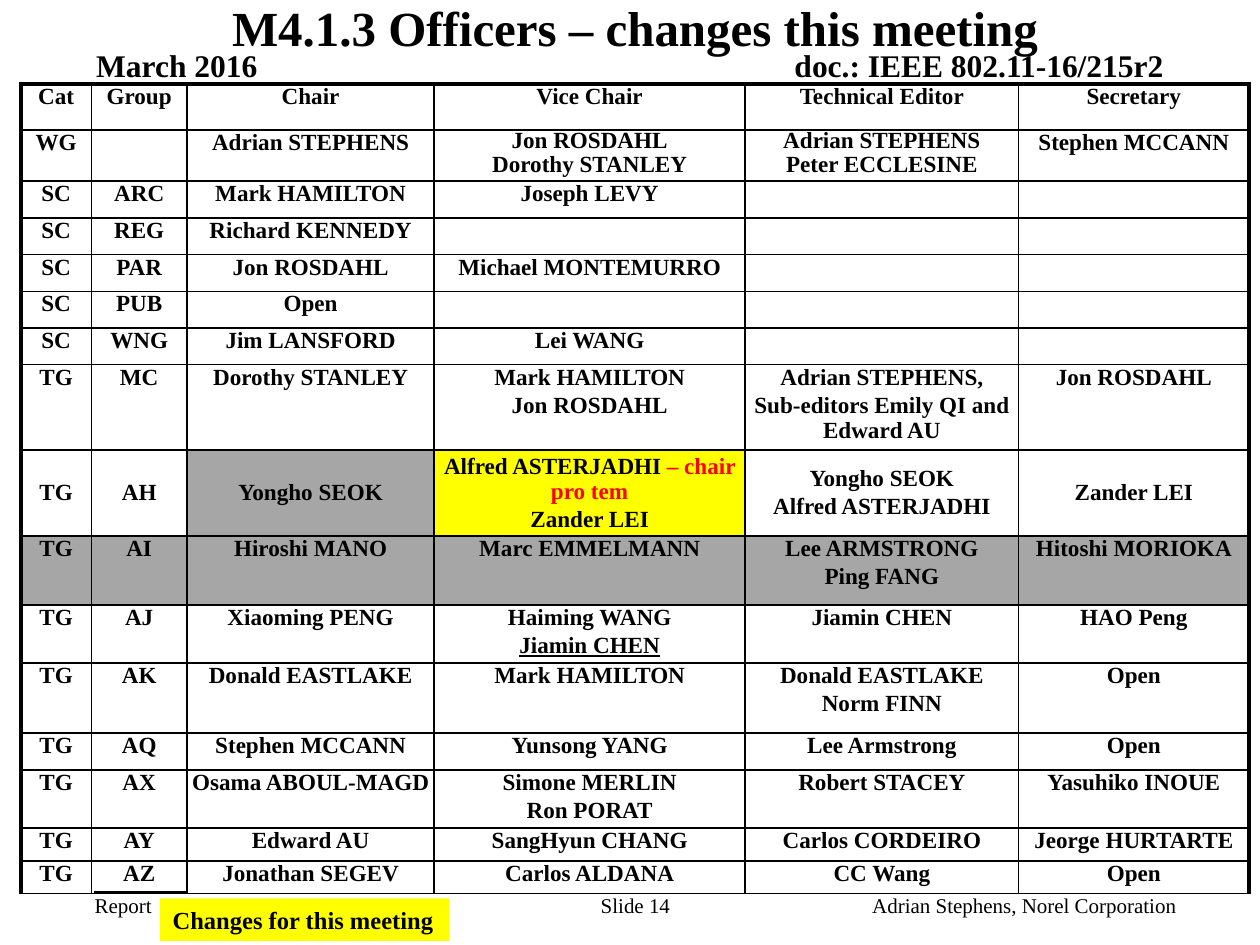
import pptx
import pptx.util
import pptx.dml.color
import pptx.enum.shapes
import pptx.enum.text
import pptx.oxml
import pptx.oxml.ns

Cm = pptx.util.Cm
Pt = pptx.util.Pt
RGB = pptx.dml.color.RGBColor
ALIGN = pptx.enum.text.PP_ALIGN
ANCHOR = pptx.enum.text.MSO_ANCHOR

BLACK = RGB(0x00, 0x00, 0x00)
WHITE = RGB(0xFF, 0xFF, 0xFF)
GREY = RGB(0xA6, 0xA6, 0xA6)
YELLOW = RGB(0xFF, 0xFF, 0x00)
RED = RGB(0xFF, 0x00, 0x00)

FACE = "Times New Roman"
BARE = dict.fromkeys(
    ("margin_left", "margin_top", "margin_right", "margin_bottom"), 0)

WIDTHS = (1.42, 1.93, 4.98, 6.27, 5.51, 4.65)
# Height in cm, then the six cells; a list in a cell holds its paragraphs,
# and a list inside that holds runs with their own format.
ROWS = (
    (0.93, "Cat", "Group", "Chair", "Vice Chair", "Technical Editor",
     "Secretary"),
    (1.03, "WG", "", "Adrian STEPHENS", ["Jon ROSDAHL", "Dorothy STANLEY"],
     ["Adrian STEPHENS", "Peter ECCLESINE"], "Stephen MCCANN"),
    (0.74, "SC", "ARC", "Mark HAMILTON", "Joseph LEVY", "", ""),
    (0.74, "SC", "REG", "Richard KENNEDY", "", "", ""),
    (0.74, "SC", "PAR", "Jon ROSDAHL", "Michael MONTEMURRO", "", ""),
    (0.74, "SC", "PUB", "Open", "", "", ""),
    (0.74, "SC", "WNG", "Jim LANSFORD", "Lei WANG", "", ""),
    (1.71, "TG", "MC", "Dorothy STANLEY", ["Mark HAMILTON", "Jon ROSDAHL"],
     ["Adrian STEPHENS,", "Sub-editors Emily QI and Edward AU"],
     "Jon ROSDAHL"),
    (1.73, "TG", "AH", "Yongho SEOK",
     [[("Alfred ASTERJADHI ", {}), ("– chair pro tem", {"color": RED})],
      "Zander LEI"],
     ["Yongho SEOK", "Alfred ASTERJADHI"], "Zander LEI"),
    (1.39, "TG", "AI", "Hiroshi MANO", "Marc EMMELMANN",
     ["Lee ARMSTRONG", "Ping FANG"], "Hitoshi MORIOKA"),
    (1.17, "TG", "AJ", "Xiaoming PENG",
     ["Haiming WANG", [("Jiamin CHEN", {"underline": True})]],
     "Jiamin CHEN", "HAO Peng"),
    (1.41, "TG", "AK", "Donald EASTLAKE", "Mark HAMILTON",
     ["Donald EASTLAKE", "Norm FINN"], "Open"),
    (0.75, "TG", "AQ", "Stephen MCCANN", "Yunsong YANG", "Lee Armstrong",
     "Open"),
    (1.17, "TG", "AX", "Osama ABOUL-MAGD", ["Simone MERLIN", "Ron PORAT"],
     "Robert STACEY", "Yasuhiko INOUE"),
    (0.66, "TG", "AY", "Edward AU", "SangHyun CHANG", "Carlos CORDEIRO",
     "Jeorge HURTARTE"),
    (0.66, "TG", "AZ", "Jonathan SEGEV", "Carlos ALDANA", "CC Wang", "Open"),
)
FILLS = {("AH", 2): GREY, ("AH", 3): YELLOW}


def style(item, values):
    for name, value in values.items():
        if name == "color":
            item.color.rgb = value
        else:
            setattr(item, name, value)


def write(frame, lines, look, form, gap=0):
    """Put paragraphs in a frame, with a gap before all but the first."""
    for i, line in enumerate(lines):
        para = frame.add_paragraph() if i else frame.paragraphs[0]
        style(para, form)
        if i:
            para.space_before = Pt(gap)
        if not line:
            # An empty line would else take the height of 18 pt text.
            end = para._p.get_or_add_endParaRPr()
            end.set("sz", str(look["size"].centipoints))
            continue
        for text, extra in [(line, {})] if isinstance(line, str) else line:
            run = para.add_run()
            run.text = text
            style(run.font, {"name": FACE, "color": BLACK, **look, **extra})


def label(slide, text, box, size, bold=False, align=ALIGN.LEFT,
          anchor=ANCHOR.TOP):
    frame = slide.shapes.add_textbox(*map(Cm, box)).text_frame
    style(frame, {**BARE, "word_wrap": True, "vertical_anchor": anchor})
    write(frame, [text], {"size": Pt(size), "bold": bold},
          {"alignment": align})


def rule(slide, left, right, y):
    line = slide.shapes.add_connector(
        pptx.enum.shapes.MSO_CONNECTOR.STRAIGHT,
        Cm(left), Cm(y), Cm(right), Cm(y))
    line.line.color.rgb = BLACK
    line.line.width = Pt(1)
    props = line._element.spPr
    props.append(props.makeelement(pptx.oxml.ns.qn("a:effectLst"), {}))


def badge(slide, text, box):
    shape = slide.shapes.add_shape(
        pptx.enum.shapes.MSO_SHAPE.RECTANGLE, *map(Cm, box))
    shape.shadow.inherit = False
    shape.fill.solid()
    shape.fill.fore_color.rgb = YELLOW
    shape.line.fill.background()
    style(shape.text_frame, {"word_wrap": False,
                             "vertical_anchor": ANCHOR.MIDDLE})
    write(shape.text_frame, [text], {"size": Pt(14), "bold": True},
          {"alignment": ALIGN.LEFT})


def edge(cell, sides):
    """Draw black cell borders; sides maps L, R, T, B to points."""
    props = cell._tc.get_or_add_tcPr()
    for i, (side, width) in enumerate(sides.items()):
        props.insert(i, pptx.oxml.parse_xml(
            f'<a:ln{side} {pptx.oxml.ns.nsdecls("a")} w="{Pt(width)}">'
            f'<a:solidFill><a:srgbClr val="{BLACK}"/></a:solidFill>'
            f'</a:ln{side}>'))


def paint(cell, group, col):
    color = GREY if group == "AI" else FILLS.get((group, col))
    if color is None and col < 2:
        cell.fill.background()
    else:
        cell.fill.solid()
        cell.fill.fore_color.rgb = color or WHITE


def roster(slide):
    """Add the table of officers."""
    count = len(WIDTHS)
    high = sum(row[0] for row in ROWS)
    table = slide.shapes.add_table(
        len(ROWS), count, Cm(0.42), Cm(1.69), Cm(sum(WIDTHS)), Cm(high)).table
    table.first_row = table.horz_banding = False
    for col, width in zip(table.columns, WIDTHS):
        col.width = Cm(width)
    for r, (height, *cells) in enumerate(ROWS):
        table.rows[r].height = Cm(height)
        group = cells[1]
        tight = cells[0] == "WG"
        middle = group == "AH"
        for c, text in enumerate(cells):
            cell = table.cell(r, c)
            style(cell, {**BARE, "vertical_anchor":
                         ANCHOR.MIDDLE if middle else ANCHOR.TOP})
            form = {"alignment": ALIGN.CENTER}
            lines = [text] if isinstance(text, str) else text
            if tight and len(lines) > 1:
                form["line_spacing"] = 0.9
            write(cell.text_frame, lines, {"size": Pt(13.2), "bold": True},
                  form, 0.7 if tight else 1.3)
            paint(cell, group, c)
            edge(cell, {"L": 1 if c else 2.25,
                        "R": 1 if c < count - 1 else 2.25,
                        "T": 1 if r else 2.25, "B": 1})


def main():
    deck = pptx.Presentation()
    deck.slide_width, deck.slide_height = Cm(25.4), Cm(19.05)
    slide = deck.slides.add_slide(deck.slide_layouts[6])
    label(slide, "doc.: IEEE 802.11-16/215r2", (14.67, 0.93, 8.79, 0.77),
          18, True, ALIGN.RIGHT, ANCHOR.BOTTOM)
    rule(slide, 1.9, 23.5, 1.7)
    label(slide, "Report", (1.91, 18, 2, 0.51), 12)
    rule(slide, 1.9, 23.7, 17.98)
    label(slide, "M4.1.3 Officers – changes this meeting",
          (2.74, 0, 20.12, 1.07), 28, True, ALIGN.CENTER, ANCHOR.MIDDLE)
    badge(slide, "Changes for this meeting", (3.23, 18.11, 5.82, 0.86))
    label(slide, "Adrian Stephens, Norel Corporation",
          (15.7, 18, 8.02, 0.51), 12, align=ALIGN.RIGHT)
    roster(slide)
    label(slide, "March 2016", (1.94, 0.93, 5, 0.77), 18, True,
          anchor=ANCHOR.BOTTOM)
    label(slide, "Slide 14", (11.31, 18, 3, 0.51), 12, align=ALIGN.CENTER)
    deck.save("out.pptx")


if __name__ == "__main__":
    main()
